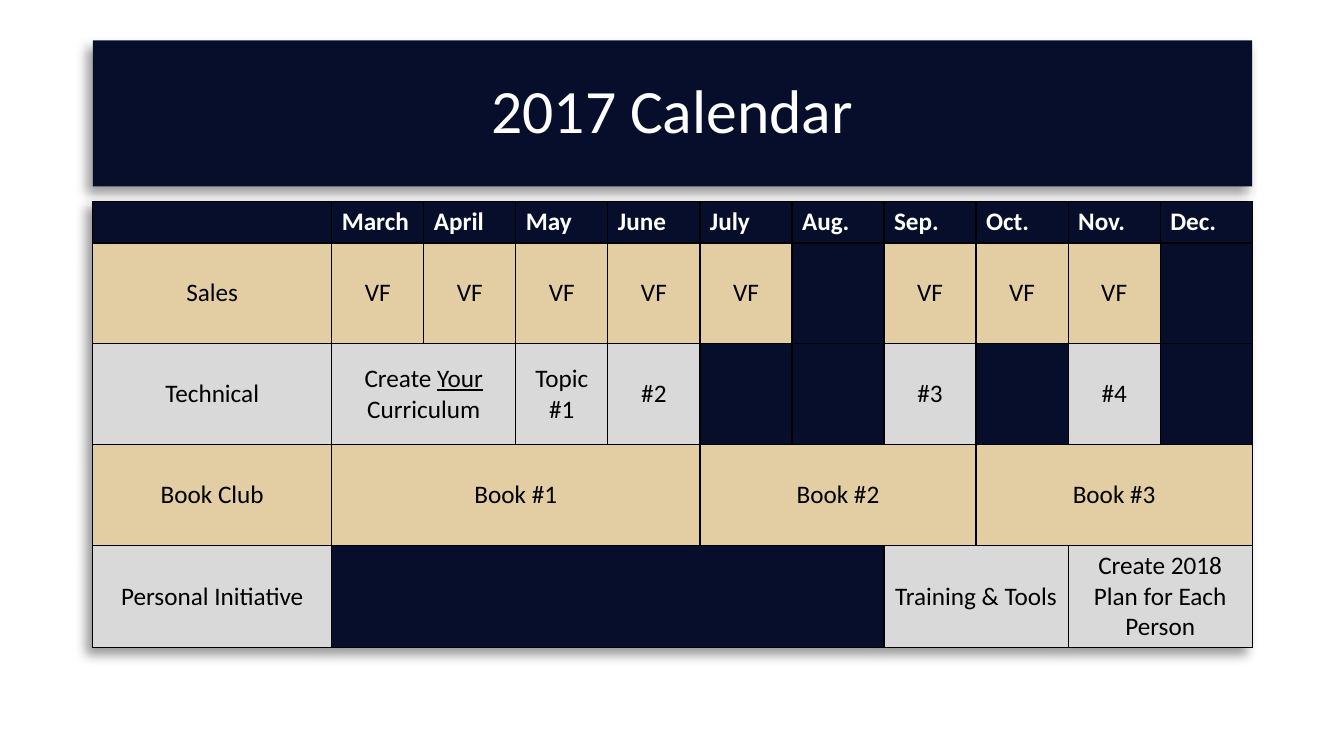
from lxml import etree
from pptx import Presentation
from pptx.dml.color import RGBColor
from pptx.enum.text import MSO_ANCHOR as Anchor, PP_ALIGN as Align
from pptx.oxml import parse_xml
from pptx.oxml.ns import nsdecls, qn
from pptx.util import Inches, Pt

NAVY, TAN, GREY = "070E2B", "E3CEA3", "D9D9D9"
WHITE, BLACK = "FFFFFF", "000000"

# Grid: one wide label column, then ten equal months
LEFT, WIDTH = 0.92, 11.5
LABEL_WIDTH = 2.37
ROW_HEIGHTS = [0.41, 1, 1, 1, 1.01]
MONTHS = ["March", "April", "May", "June", "July",
          "Aug.", "Sep.", "Oct.", "Nov.", "Dec."]

# Each entry is (text, months covered); an empty text is a blocked period
VF, FREE = ("VF", 1), ("", 1)
PROGRAMS = [
    ("Sales", TAN, [VF] * 5 + [FREE] + [VF] * 3 + [FREE]),
    ("Technical", GREY, [("Create _Your_ Curriculum", 2), ("Topic #1", 1),
                         ("#2", 1), FREE, FREE, ("#3", 1), FREE,
                         ("#4", 1), FREE]),
    ("Book Club", TAN, [("Book #1", 4), ("Book #2", 3), ("Book #3", 3)]),
    ("Personal Initiative", GREY, [("", 6), ("Training & Tools", 2),
                                   ("Create 2018 Plan for Each Person", 2)]),
]


def paint(color_format, color):
    color_format.rgb = RGBColor.from_string(color)


def fill_with(target, color):
    target.fill.solid()
    paint(target.fill.fore_color, color)


def write(text_frame, text, size=18, color=BLACK, bold=False,
          align=Align.CENTER, line_spacing=None):
    """Write one paragraph; words between underscores are underlined."""
    paragraph = text_frame.paragraphs[0]
    paragraph.alignment = align
    paragraph.line_spacing = line_spacing
    for index, part in enumerate(text.split("_")):
        run = paragraph.add_run()
        run.text = part
        run.font.name = "Calibri"
        run.font.size = Pt(size)
        run.font.bold = bold
        run.font.underline = index % 2 == 1
        paint(run.font.color, color)


def soft_shadow():
    return parse_xml(
        f'<a:effectLst {nsdecls("a")}>'
        f'<a:outerShdw blurRad="{Pt(8)}" dist="{Pt(6)}" dir="8100000" '
        f'algn="tr" rotWithShape="0"><a:srgbClr val="{BLACK}">'
        '<a:alpha val="40000"/></a:srgbClr></a:outerShdw></a:effectLst>')


def add_borders(cell):
    properties = cell._tc.get_or_add_tcPr()
    for index, side in enumerate("LRTB"):
        line = etree.Element(qn(f"a:ln{side}"), w=str(Pt(1)))
        fill = etree.SubElement(line, qn("a:solidFill"))
        etree.SubElement(fill, qn("a:srgbClr"), val=BLACK)
        properties.insert(index, line)


def add_title(slide):
    title = slide.shapes.title
    title.left, title.top = Inches(LEFT), Inches(0.4)
    title.width, title.height = Inches(WIDTH), Inches(1.45)
    fill_with(title, NAVY)
    title._element.spPr.append(soft_shadow())
    title.text_frame.vertical_anchor = Anchor.MIDDLE
    write(title.text_frame, "2017 Calendar", size=44, color=WHITE,
          line_spacing=0.9)


def fill_program(table, row, name, color, entries):
    column = 0
    for text, span in [(name, 1)] + entries:
        cell = table.cell(row, column)
        if span > 1:
            cell.merge(table.cell(row, column + span - 1))
        if text:
            cell.vertical_anchor = Anchor.MIDDLE
            write(cell.text_frame, text)
        for covered in range(column, column + span):
            fill_with(table.cell(row, covered), color if text else NAVY)
        column += span


def add_calendar(slide):
    frame = slide.shapes.add_table(
        len(ROW_HEIGHTS), len(MONTHS) + 1, Inches(LEFT), Inches(2),
        Inches(WIDTH), Inches(sum(ROW_HEIGHTS)))
    table = frame.table
    table.horz_banding = False
    table._tbl.tblPr.insert(0, soft_shadow())
    for row, height in zip(table.rows, ROW_HEIGHTS):
        row.height = Inches(height)
    month_width = (WIDTH - LABEL_WIDTH) / len(MONTHS)
    for index, column in enumerate(table.columns):
        column.width = Inches(month_width if index else LABEL_WIDTH)

    # Header row
    for index, month in enumerate([""] + MONTHS):
        cell = table.cell(0, index)
        fill_with(cell, NAVY)
        if month:
            write(cell.text_frame, month, color=WHITE, bold=True,
                  align=Align.LEFT)

    # Program rows
    for row, program in enumerate(PROGRAMS, start=1):
        fill_program(table, row, *program)
    for cell in table.iter_cells():
        add_borders(cell)


def main():
    presentation = Presentation()
    presentation.slide_width = Inches(13.33)
    presentation.slide_height = Inches(7.5)
    slide = presentation.slides.add_slide(presentation.slide_layouts[5])
    add_title(slide)
    add_calendar(slide)
    presentation.save("out.pptx")


if __name__ == "__main__":
    main()
